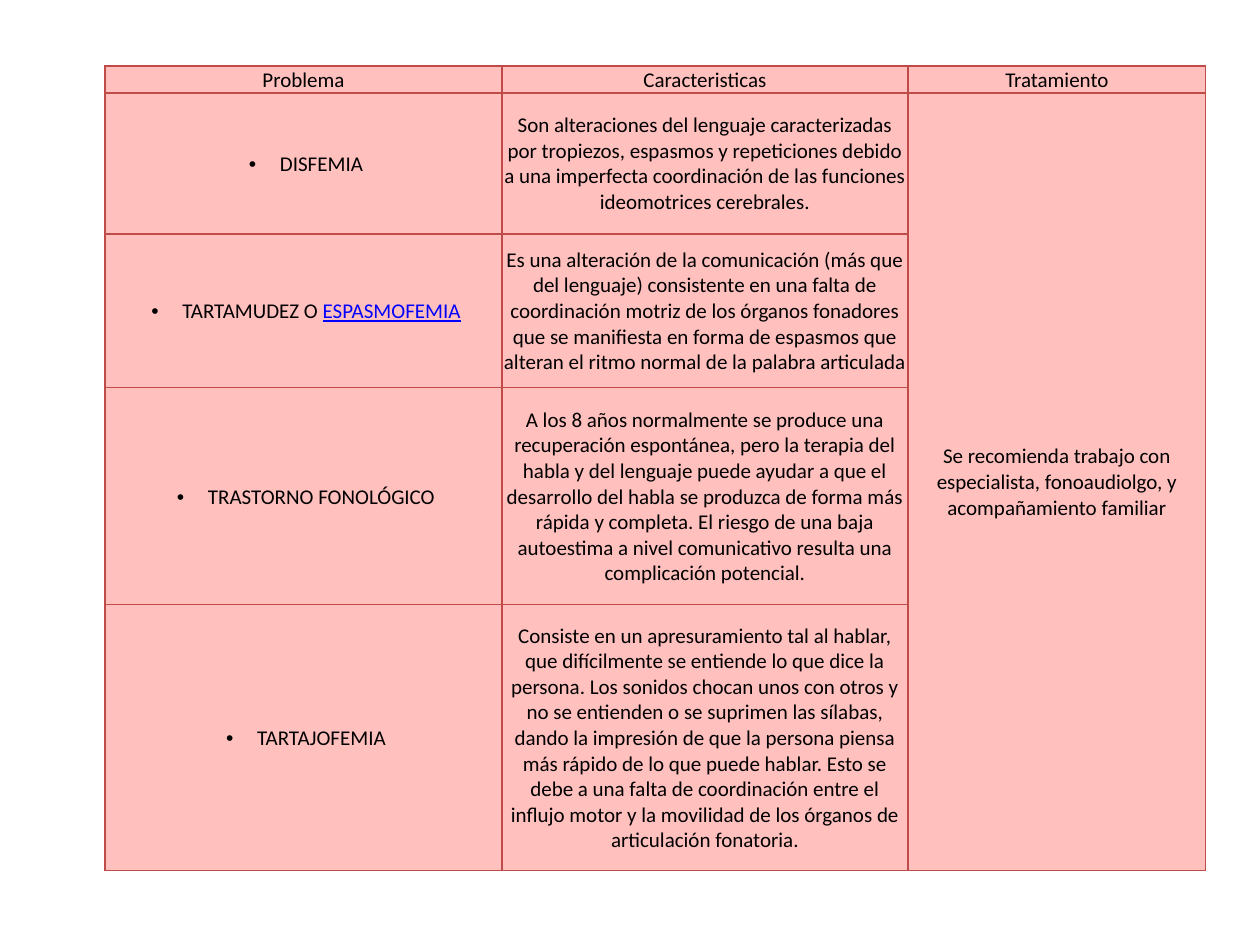
import pptx
import pptx.dml.color
import pptx.enum.text
import pptx.util
from dataclasses import dataclass
from lxml import etree

SCALE = 914400 // 126
NS = "http://schemas.openxmlformats.org/drawingml/2006/main"


@dataclass(frozen=True)
class Theme:
    """Colours and type of the slide."""
    font: str = "Calibri"
    size: int = 12
    ink: str = "000000"
    link: str = "0000FF"
    fill: str = "FFC0BE"
    edge: str = "BF4C48"
    line: float = 0.75


THEME = Theme()
HEADS = ["Problema", "Caracteristicas", "Tratamiento"]
CARE = "Se recomienda trabajo con especialista, fonoaudiolgo, y acompañamiento familiar"
# Each row: problem, linked part of its name, features
ROWS = [
    ("DISFEMIA", "",
     "Son alteraciones del lenguaje caracterizadas por tropiezos, espasmos y "
     "repeticiones debido a una imperfecta coordinación de las funciones "
     "ideomotrices cerebrales."),
    ("TARTAMUDEZ O ", "ESPASMOFEMIA",
     "Es una alteración de la comunicación (más que del lenguaje) consistente "
     "en una falta de coordinación motriz de los órganos fonadores que se "
     "manifiesta en forma de espasmos que alteran el ritmo normal de la "
     "palabra articulada"),
    ("TRASTORNO FONOLÓGICO", "",
     "A los 8 años normalmente se produce una recuperación espontánea, pero la "
     "terapia del habla y del lenguaje puede ayudar a que el desarrollo del "
     "habla se produzca de forma más rápida y completa. El riesgo de una baja "
     "autoestima a nivel comunicativo resulta una complicación potencial."),
    ("TARTAJOFEMIA", "",
     "Consiste en un apresuramiento tal al hablar, que difícilmente se entiende "
     "lo que dice la persona. Los sonidos chocan unos con otros y no se "
     "entienden o se suprimen las sílabas, dando la impresión de que la persona "
     "piensa más rápido de lo que puede hablar. Esto se debe a una falta de "
     "coordinación entre el influjo motor y la movilidad de los órganos de "
     "articulación fonatoria."),
]
WIDTHS = [397, 406, 298]
HEIGHTS = [27, 141, 154, 217, 266]


def px(n):
    """Turn pixels into EMU."""
    return pptx.util.Emu(n * SCALE)


def rgb(code):
    """Turn a hex code into a colour."""
    return pptx.dml.color.RGBColor.from_string(code)


def add_edges(cell):
    """Draw the four borders of a cell."""
    props = cell._tc.get_or_add_tcPr()
    for i, side in enumerate(("lnL", "lnR", "lnT", "lnB")):
        line = etree.Element(f"{{{NS}}}{side}", w=str(pptx.util.Pt(THEME.line)))
        fill = etree.SubElement(line, f"{{{NS}}}solidFill")
        etree.SubElement(fill, f"{{{NS}}}srgbClr", val=THEME.edge)
        props.insert(i, line)


def style_cell(cell, anchor):
    """Set the fill, margins, anchor and borders of a cell."""
    cell.fill.solid()
    cell.fill.fore_color.rgb = rgb(THEME.fill)
    cell.margin_left = cell.margin_right = cell.margin_top = px(1)
    cell.margin_bottom = 0
    cell.vertical_anchor = anchor
    add_edges(cell)


def write(cell, text):
    """Write centred text and return its paragraph."""
    para = cell.text_frame.paragraphs[0]
    para.alignment = pptx.enum.text.PP_ALIGN.CENTER
    para.font.name = THEME.font
    para.font.size = pptx.util.Pt(THEME.size)
    para.font.color.rgb = rgb(THEME.ink)
    para.add_run().text = text
    return para


def add_bullet(para):
    """Give a paragraph a hanging bullet."""
    props = para._p.get_or_add_pPr()
    props.set("marL", str(px(36)))
    props.set("indent", str(-px(31)))
    font = etree.Element(f"{{{NS}}}buFont", typeface="Arial")
    mark = etree.Element(f"{{{NS}}}buChar", char="•")
    props.insert(0, font)
    props.insert(1, mark)


def add_link(para, text):
    """Add a run in the look of a link."""
    run = para.add_run()
    run.text = text
    run.font.underline = True
    run.font.color.rgb = rgb(THEME.link)


def add_grid(slide):
    """Add the empty table with its sizes and cell styles."""
    anchors = pptx.enum.text.MSO_ANCHOR
    grid = slide.shapes.add_table(
        len(HEIGHTS), len(WIDTHS), px(105), px(66),
        px(sum(WIDTHS)), px(sum(HEIGHTS))).table
    grid.first_row = grid.horz_banding = False
    for col, width in zip(grid.columns, WIDTHS):
        col.width = px(width)
    for i, (row, height) in enumerate(zip(grid.rows, HEIGHTS)):
        row.height = px(height)
        for cell in row.cells:
            style_cell(cell, anchors.MIDDLE if i else anchors.BOTTOM)
    return grid


def fill_grid(grid):
    """Write the headings, the problems and the shared treatment."""
    for i, head in enumerate(HEADS):
        write(grid.cell(0, i), head)
    for i, (name, link, traits) in enumerate(ROWS, 1):
        para = write(grid.cell(i, 0), name)
        add_bullet(para)
        if link:
            add_link(para, link)
        write(grid.cell(i, 1), traits)
    grid.cell(1, 2).merge(grid.cell(len(ROWS), 2))
    write(grid.cell(1, 2), CARE)


def main():
    """Build and save the slide."""
    deck = pptx.Presentation()
    deck.slide_width = pptx.util.Inches(10)
    deck.slide_height = pptx.util.Inches(7.5)
    slide = deck.slides.add_slide(deck.slide_layouts[6])
    fill_grid(add_grid(slide))
    deck.save("out.pptx")


main()
